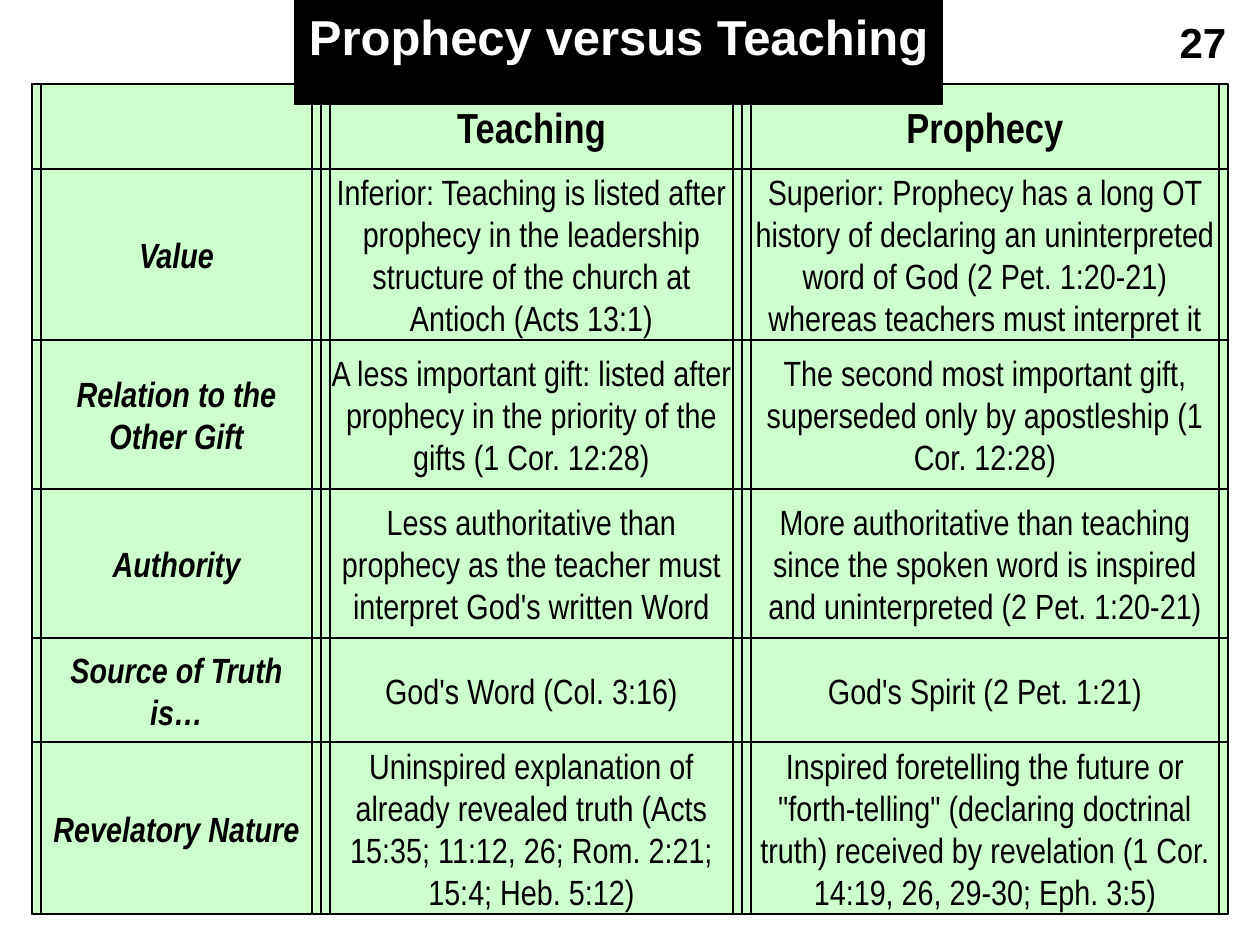
from dataclasses import dataclass
from itertools import pairwise

from pptx import Presentation
from pptx.dml.color import RGBColor
from pptx.enum.shapes import MSO_SHAPE
from pptx.enum.text import MSO_ANCHOR, PP_ALIGN
from pptx.shapes.autoshape import Shape
from pptx.util import Emu, Pt

RECT = MSO_SHAPE.RECTANGLE
TOP, MIDDLE = MSO_ANCHOR.TOP, MSO_ANCHOR.MIDDLE
CENTER = PP_ALIGN.CENTER

SCALE = 914400 / 126
BLACK, WHITE, GREEN = "000000", "FFFFFF", "CCFFCC"
THIN, HAIR = 0.75, 0
GAP = 9

COLS = [32, 321, 742, 1228]
ROWS = [84, 169, 340, 489, 638, 742, 914]
CELLS = [
    ("", "Teaching", "Prophecy"),
    ("Value",
     "Inferior: Teaching is listed after prophecy in the leadership "
     "structure of the church at Antioch (Acts 13:1)",
     "Superior: Prophecy has a long OT history of declaring an uninterpreted "
     "word of God (2 Pet. 1:20-21) whereas teachers must interpret it"),
    ("Relation to the Other Gift",
     "A less important gift: listed after prophecy in the priority of the "
     "gifts (1 Cor. 12:28)",
     "The second most important gift, superseded only by apostleship "
     "(1 Cor. 12:28)"),
    ("Authority",
     "Less authoritative than prophecy as the teacher must interpret "
     "God's written Word",
     "More authoritative than teaching since the spoken word is inspired "
     "and uninterpreted (2 Pet. 1:20-21)"),
    ("Source of Truth is…", "God's Word (Col. 3:16)",
     "God's Spirit (2 Pet. 1:21)"),
    ("Revelatory Nature",
     "Uninspired explanation of already revealed truth (Acts 15:35; 11:12, "
     "26; Rom. 2:21; 15:4; Heb. 5:12)",
     "Inspired foretelling the future or \"forth-telling\" (declaring "
     "doctrinal truth) received by revelation (1 Cor. 14:19, 26, 29-30; "
     "Eph. 3:5)"),
]


@dataclass
class Box:
    left: int
    top: int
    width: int
    height: int

    def emu(self) -> list[Emu]:
        sides = (self.left, self.top, self.width, self.height)
        return [px(side) for side in sides]


@dataclass
class Style:
    size: int
    font: str = "Arial Narrow"
    bold: bool = False
    slant: bool = False
    color: str = BLACK


HEAD = Style(24, bold=True)
LABEL = Style(20, bold=True, slant=True)
BODY = Style(20)
TITLE = Style(28, "Arial", bold=True, color=WHITE)
NUMBER = Style(24, "Arial", bold=True)


def px(count: int) -> Emu:
    return Emu(round(count * SCALE))


def rgb(code: str) -> RGBColor:
    return RGBColor.from_string(code)


def add_rect(shapes, box: Box, fill: str | None = None,
             line: float | None = None) -> Shape:
    shape = shapes.add_shape(RECT, *box.emu())
    shape.shadow.inherit = False
    if fill:
        shape.fill.solid()
        shape.fill.fore_color.rgb = rgb(fill)
    else:
        shape.fill.background()
    if line is None:
        shape.line.fill.background()
    else:
        shape.line.color.rgb = rgb(BLACK)
        shape.line.width = Pt(line)
    return shape


def write(shape: Shape, text: str, style: Style, anchor: MSO_ANCHOR,
          wrap: bool) -> None:
    frame = shape.text_frame
    frame.word_wrap = wrap
    frame.vertical_anchor = anchor
    para = frame.paragraphs[0]
    para.alignment = CENTER
    run = para.add_run()
    run.text = text
    font = run.font
    font.name, font.size = style.font, Pt(style.size)
    font.bold, font.italic = style.bold, style.slant
    font.color.rgb = rgb(style.color)


def add_cell(shapes, box: Box, text: str, style: Style) -> None:
    """Draw the inset text box and the hairline frame around it."""
    inner = Box(box.left + GAP, box.top, box.width - 2 * GAP, box.height)
    cell = add_rect(shapes, inner, line=THIN)
    frame = cell.text_frame
    frame.margin_left = frame.margin_right = 0
    frame.margin_top = frame.margin_bottom = 0
    if text:
        write(cell, text, style, MIDDLE, True)
    add_rect(shapes, box, line=HAIR)


def add_grid(shapes) -> None:
    area = Box(COLS[0], ROWS[0], COLS[-1] - COLS[0], ROWS[-1] - ROWS[0])
    add_rect(shapes, area, GREEN, THIN)
    for row, (top, base) in enumerate(pairwise(ROWS)):
        for col, (left, right) in enumerate(pairwise(COLS)):
            style = HEAD if row == 0 else LABEL if col == 0 else BODY
            box = Box(left, top, right - left, base - top)
            add_cell(shapes, box, CELLS[row][col], style)


def main() -> None:
    deck = Presentation()
    deck.slide_width, deck.slide_height = px(1260), px(945)
    slide = deck.slides.add_slide(deck.slide_layouts[6])
    shapes = slide.shapes

    add_grid(shapes.add_group_shape().shapes)
    number = shapes.add_textbox(*Box(1167, 10, 72, 63).emu())
    write(number, "27", NUMBER, TOP, False)
    title = add_rect(shapes, Box(294, 0, 649, 105), BLACK)
    write(title, "Prophecy versus Teaching", TITLE, TOP, False)

    deck.save("out.pptx")


if __name__ == "__main__":
    main()
